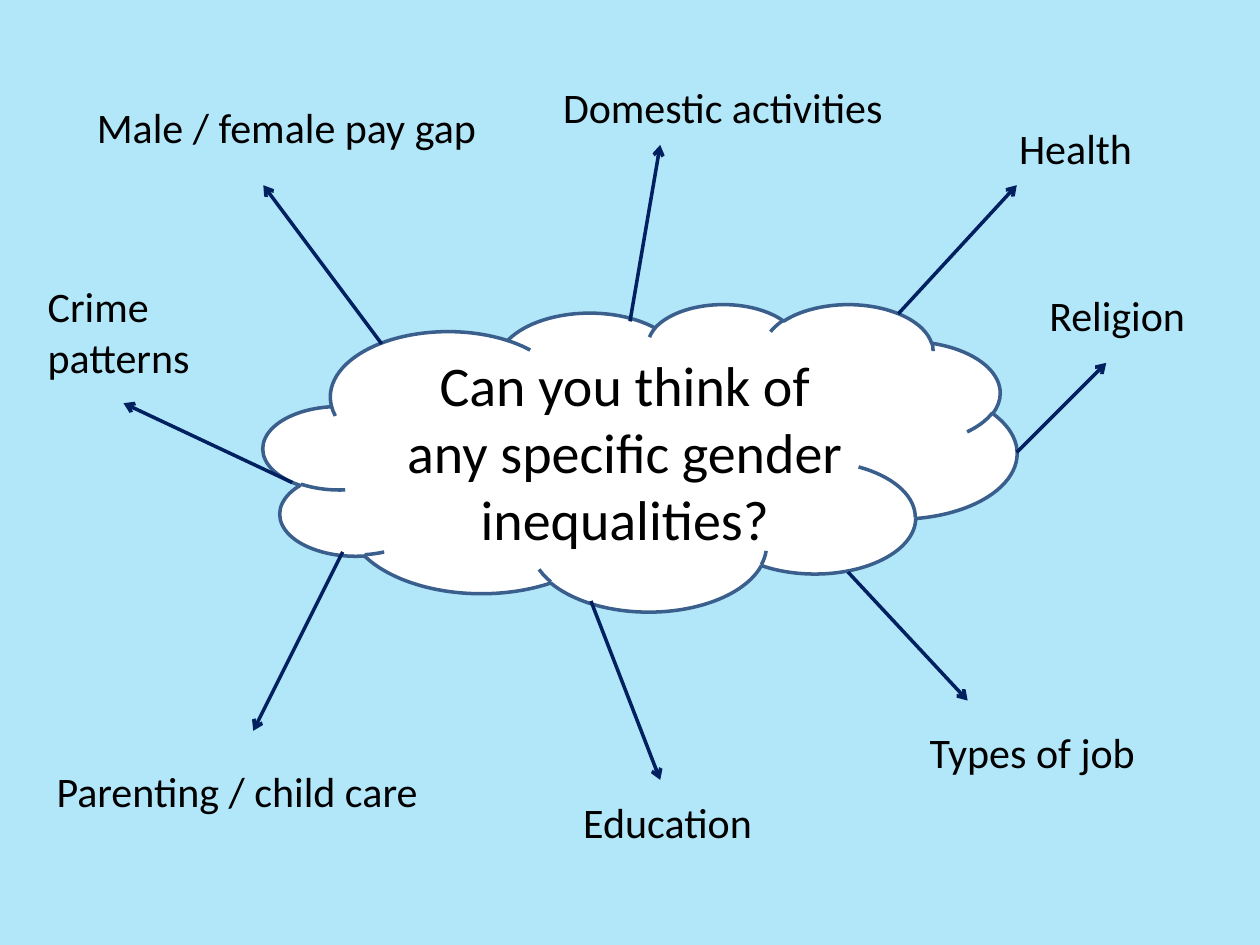
"""Build a mind map of gender inequalities around a central cloud."""
from dataclasses import dataclass

from lxml import etree
from pptx import Presentation, util as u
from pptx.dml.color import RGBColor
from pptx.enum import shapes, text
from pptx.oxml.ns import qn

COLORS = {"sky": "B2E7FA", "cloud": "FFFFFF", "outline": "3A5F8C",
          "arrow": "002060", "ink": "000000"}
COLS, ROWS = 100, 75
WIDTH, HEIGHT = u.Inches(10), u.Inches(7.5)
LINE_WIDTH = u.Pt(2)


@dataclass(frozen=True)
class Box:
    col: float
    row: float
    cols: float
    rows: float = 5


@dataclass(frozen=True)
class Idea:
    label: str
    box: Box
    start: tuple[float, float]
    end: tuple[float, float]


CLOUD = Box(20.9, 24.1, 59.8, 24.4)
QUESTION = Box(30.3, 27.3, 38.6, 17.2)
IDEAS = [
    Idea("Male / female pay gap", Box(6.7, 7.6, 33.1), (30.3, 27.3), (20.9, 14.7)),
    Idea("Domestic activities", Box(43.7, 6, 33.1), (50, 25.5), (52.4, 11.5)),
    Idea("Parenting / child care", Box(3.5, 60.3, 33.1), (27.2, 43.8), (20.1, 58)),
    Idea("Types of job", Box(72.8, 57.2, 19.3), (67.3, 45.4), (76.8, 55.6)),
    Idea("Education", Box(45.3, 62.7, 17.3), (46.9, 47.7), (52.4, 61.9)),
    Idea("Health", Box(79.9, 9.2, 15), (71.3, 24.9), (80.7, 14.7)),
    Idea("Crime patterns", Box(2.8, 21.8, 15.4, 9.1), (23.2, 38.3), (9.8, 32)),
    Idea("Religion", Box(82.3, 22.5, 15), (80.7, 35.9), (87.8, 28.8)),
]


def rgb(name: str) -> RGBColor:
    return RGBColor.from_string(COLORS[name])


def point(col: float, row: float) -> tuple[int, int]:
    return round(WIDTH * col / COLS), round(HEIGHT * row / ROWS)


def place(box: Box) -> tuple[int, int, int, int]:
    return point(box.col, box.row) + point(box.cols, box.rows)


def add_text(s, content: str, box: Box, *, size: float = 24,
             align=text.PP_ALIGN.LEFT, font: str = "Calibri", color: str = "ink") -> None:
    tf = s.shapes.add_textbox(*place(box)).text_frame
    tf.word_wrap = True
    tf.auto_size = text.MSO_AUTO_SIZE.SHAPE_TO_FIT_TEXT
    p = tf.paragraphs[0]
    p.alignment = align
    r = p.add_run()
    r.text = content
    r.font.name, r.font.size = font, u.Pt(size)
    r.font.color.rgb = rgb(color)


def add_cloud(s, box: Box) -> None:
    sp = s.shapes.add_shape(shapes.MSO_SHAPE.CLOUD, *place(box))
    sp.shadow.inherit = False
    sp.fill.solid()
    sp.fill.fore_color.rgb = rgb("cloud")
    sp.line.color.rgb = rgb("outline")
    sp.line.width = LINE_WIDTH


def add_arrow(s, start: tuple[float, float], end: tuple[float, float]) -> None:
    line = s.shapes.add_connector(shapes.MSO_CONNECTOR.STRAIGHT, *point(*start), *point(*end))
    line.line.color.rgb = rgb("arrow")
    line.line.width = LINE_WIDTH
    etree.SubElement(line.line._get_or_add_ln(), qn("a:tailEnd"), type="arrow")
    etree.SubElement(line._element.spPr, qn("a:effectLst"))


def main() -> None:
    prs = Presentation()
    prs.slide_width, prs.slide_height = WIDTH, HEIGHT
    s = prs.slides.add_slide(prs.slide_layouts[6])
    s.background.fill.solid()
    s.background.fill.fore_color.rgb = rgb("sky")
    add_cloud(s, CLOUD)
    add_text(s, "Can you think of any specific gender inequalities?", QUESTION,
             size=32, align=text.PP_ALIGN.CENTER)
    for idea in IDEAS:
        add_arrow(s, idea.start, idea.end)
        add_text(s, idea.label, idea.box)
    prs.save("out.pptx")


if __name__ == "__main__":
    main()
